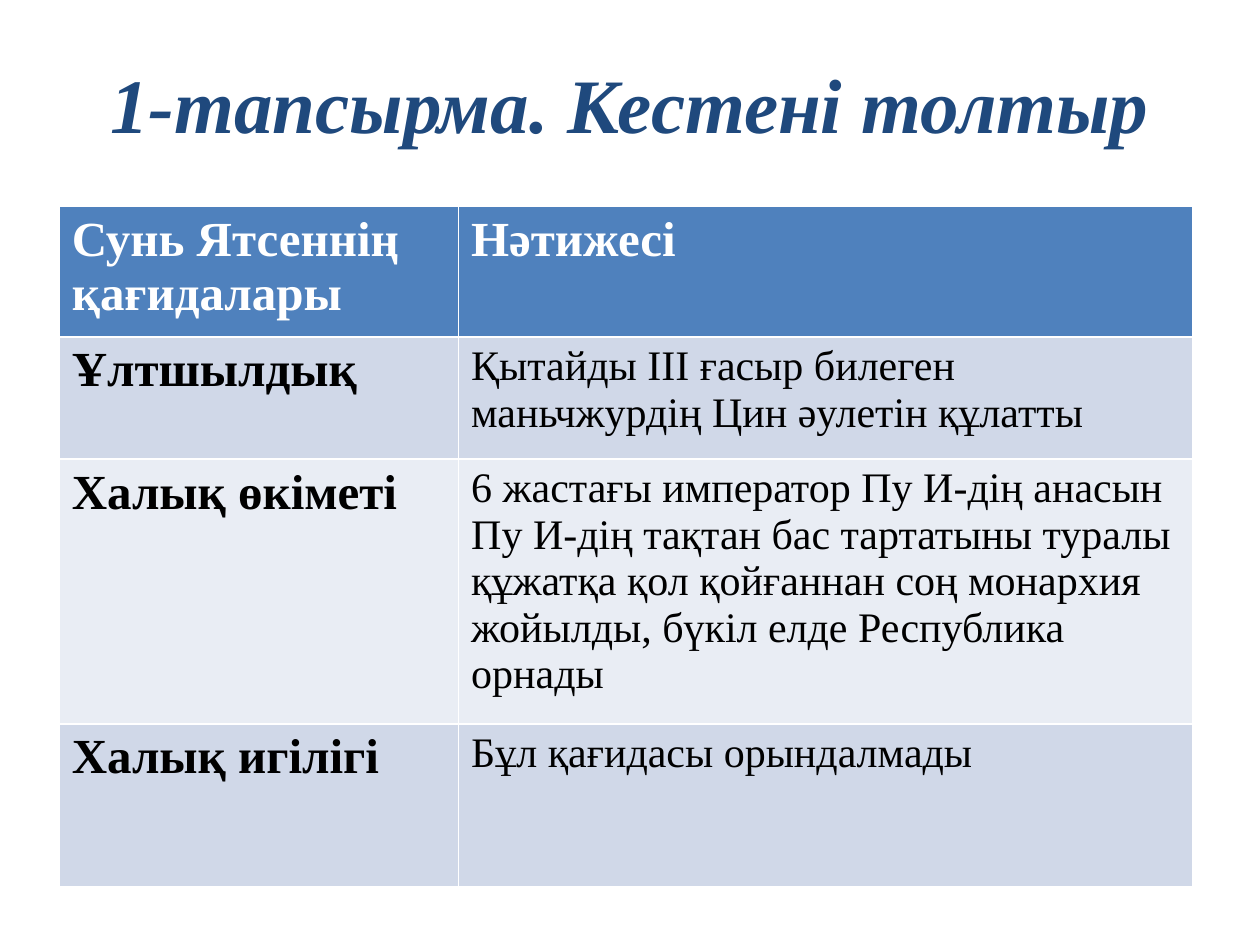
from pptx import Presentation
from pptx.dml.color import RGBColor
from pptx.enum.text import MSO_ANCHOR, PP_ALIGN
from pptx.util import Inches, Pt

FONT = "Times New Roman"
NAVY = RGBColor(0x1F, 0x49, 0x7D)
BLUE = RGBColor(0x4F, 0x81, 0xBD)
BAND_DARK = RGBColor(0xD0, 0xD8, 0xE8)
BAND_LIGHT = RGBColor(0xE9, 0xED, 0xF4)
WHITE = RGBColor(0xFF, 0xFF, 0xFF)
BLACK = RGBColor(0, 0, 0)

TITLE = "1-тапсырма. Кестені толтыр"
ROWS = [
    ("Сунь Ятсеннің қағидалары", "Нәтижесі"),
    ("Ұлтшылдық", "Қытайды III ғасыр билеген маньчжурдің Цин әулетін құлатты"),
    ("Халық өкіметі", "6 жастағы император Пу И-дің анасын Пу И-дің тақтан бас "
     "тартатыны туралы құжатқа қол қойғаннан соң монархия жойылды, "
     "бүкіл елде Республика орнады"),
    ("Халық игілігі", "Бұл қағидасы орындалмады"),
]
COLUMN_WIDTHS = [3.17, 5.83]
ROW_HEIGHTS = [0.96, 0.97, 1.93, 1.29]


def add_run(paragraph, text, size, color, bold=True, italic=False):
    run = paragraph.add_run()
    run.text = text
    run.font.name = FONT
    run.font.size = Pt(size)
    run.font.bold = bold
    run.font.italic = italic
    run.font.color.rgb = color


def add_title(slide):
    title = slide.shapes.add_textbox(Inches(0.5), Inches(0.3), Inches(9), Inches(1.03))
    frame = title.text_frame
    frame.word_wrap = True
    frame.vertical_anchor = MSO_ANCHOR.MIDDLE
    paragraph = frame.paragraphs[0]
    paragraph.alignment = PP_ALIGN.CENTER
    add_run(paragraph, TITLE, 44, NAVY, italic=True)


def add_principles_table(slide):
    table = slide.shapes.add_table(
        len(ROWS), len(COLUMN_WIDTHS), Inches(0.47), Inches(1.64),
        Inches(sum(COLUMN_WIDTHS)), Inches(sum(ROW_HEIGHTS))).table
    for column, width in zip(table.columns, COLUMN_WIDTHS):
        column.width = Inches(width)
    for row, height in zip(table.rows, ROW_HEIGHTS):
        row.height = Inches(height)

    for row_index, texts in enumerate(ROWS):
        is_header = row_index == 0
        band = BAND_DARK if row_index % 2 else BAND_LIGHT
        for column_index, text in enumerate(texts):
            cell = table.cell(row_index, column_index)
            cell.fill.solid()
            cell.fill.fore_color.rgb = BLUE if is_header else band
            is_heading = is_header or column_index == 0
            add_run(cell.text_frame.paragraphs[0], text,
                    28 if is_heading else 24,
                    WHITE if is_header else BLACK, bold=is_heading)


def main():
    presentation = Presentation()
    presentation.slide_width = Inches(10)
    presentation.slide_height = Inches(7.5)
    slide = presentation.slides.add_slide(presentation.slide_layouts[6])
    add_title(slide)
    add_principles_table(slide)
    presentation.save("out.pptx")


if __name__ == "__main__":
    main()
